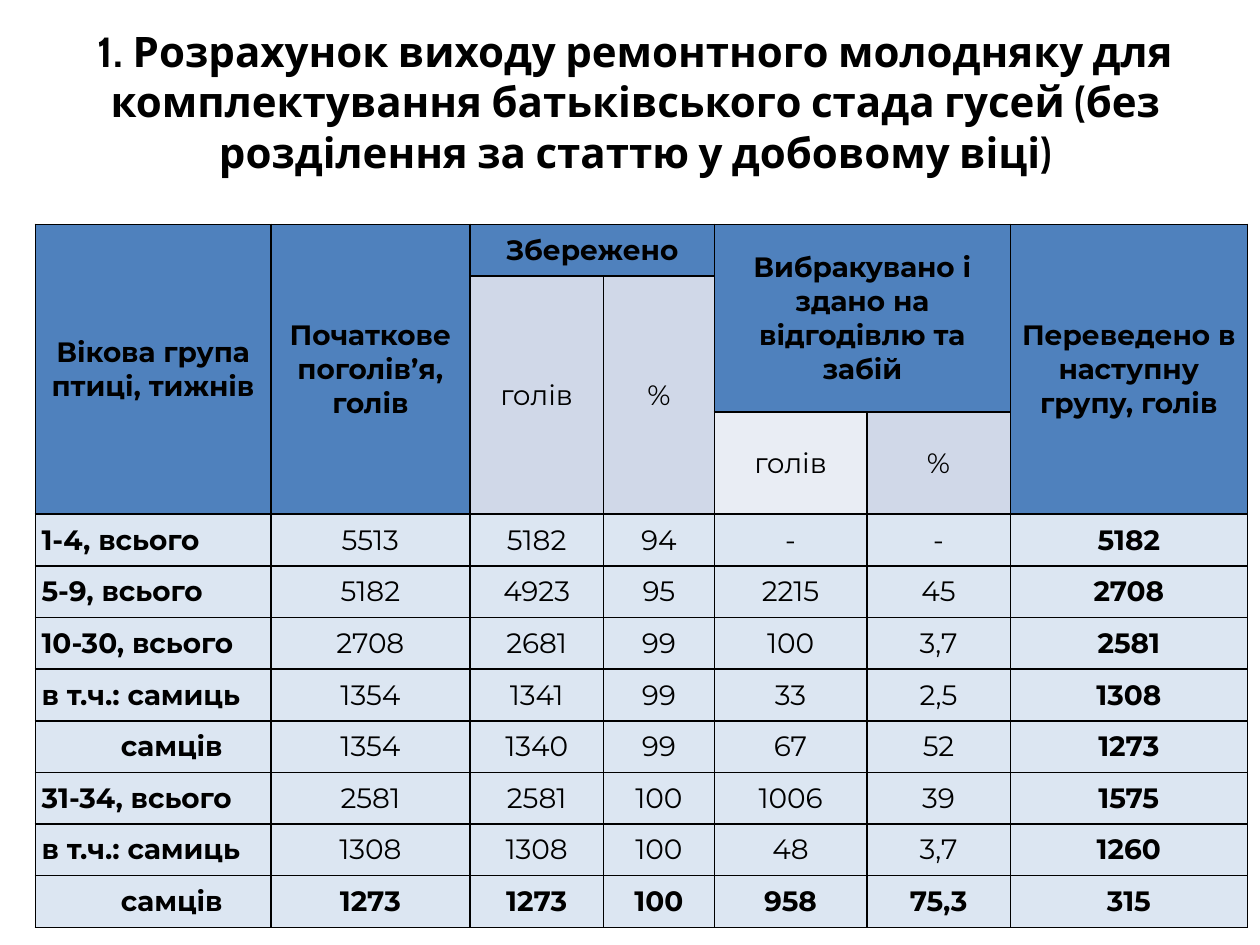
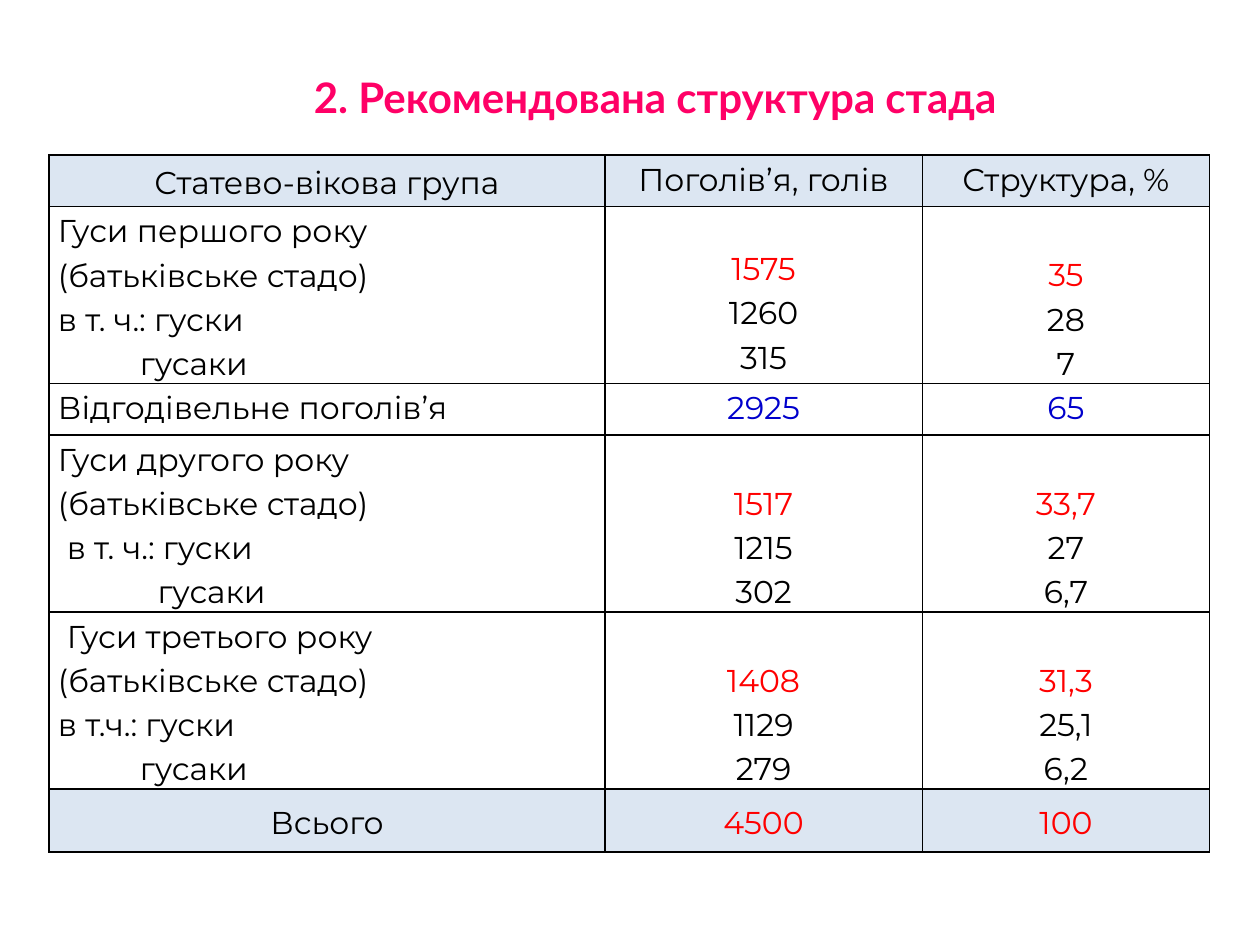
from dataclasses import dataclass
from lxml import etree
from pptx import Presentation
from pptx.dml.color import RGBColor
from pptx.enum import text
from pptx.oxml import ns
from pptx.util import Inches, Pt

MID, TOP = text.MSO_ANCHOR.MIDDLE, text.MSO_ANCHOR.TOP
LEFT, CENTER = text.PP_ALIGN.LEFT, text.PP_ALIGN.CENTER


@dataclass(frozen=True)
class Theme:
    black: str = "000000"
    pink: str = "FF0066"
    red: str = "FF0000"
    navy: str = "0000CC"
    blue: str = "4F81BD"
    band: str = "D0D8E8"
    pale: str = "E9EDF4"
    ice: str = "DCE6F2"
    body: str = "Montserrat"
    title: int = 24
    small: int = 16
    large: int = 18
    line: float = 1


T = Theme()

# Rearing table: row, column, rows spanned, columns spanned, text, fill
HEADS = [
    (0, 0, 3, 1, "Вікова група птиці, тижнів", T.blue),
    (0, 1, 3, 1, "Початкове поголів’я, голів", T.blue),
    (0, 2, 1, 2, "Збережено", T.blue),
    (0, 4, 2, 2, "Вибракувано і здано на відгодівлю та забій", T.blue),
    (0, 6, 3, 1, "Переведено в наступну групу, голів", T.blue),
    (1, 2, 2, 1, "голів", T.band),
    (1, 3, 2, 1, "%", T.band),
    (2, 4, 1, 1, "голів", T.pale),
    (2, 5, 1, 1, "%", T.band),
]
AGES = [
    ("1-4, всього", "5513", "5182", "94", "-", "-", "5182"),
    ("5-9, всього", "5182", "4923", "95", "2215", "45", "2708"),
    ("10-30, всього", "2708", "2681", "99", "100", "3,7", "2581"),
    ("в т.ч.: самиць", "1354", "1341", "99", "33", "2,5", "1308"),
    ("самців", "1354", "1340", "99", "67", "52", "1273"),
    ("31-34, всього", "2581", "2581", "100", "1006", "39", "1575"),
    ("в т.ч.: самиць", "1308", "1308", "100", "48", "3,7", "1260"),
    ("самців", "1273", "1273", "100", "958", "75,3", "315"),
]

# Flock table: labels, their indents, heads, shares, colour of the first value
FLOCK = [
    ("Гуси першого року\n(батьківське стадо)\nв т. ч.: гуски\nгусаки",
     (0, 0, 0, 0.65), "1575\n1260\n315", "35\n28\n7", T.red),
    ("Відгодівельне поголів’я", (0,), "2925", "65", T.navy),
    ("Гуси другого року\n(батьківське стадо)\nв т. ч.: гуски\nгусаки",
     (0, 0, 0.07, 0.79), "1517\n1215\n302", "33,7\n27\n6,7", T.red),
    ("Гуси третього року\n(батьківське стадо)\nв т.ч.: гуски\nгусаки",
     (0.07, 0, 0, 0.65), "1408\n1129\n279", "31,3\n25,1\n6,2", T.red),
]


def style(run, size, face, color, bold=False):
    font = run.font
    font.size, font.name, font.bold = Pt(size), face, bold
    font.color.rgb = RGBColor.from_string(color)


def indent(para, left=0, first=0):
    props = para._p.get_or_add_pPr()
    props.set("marL", str(Inches(left)))
    props.set("indent", str(Inches(first)))


def add_title(slide, box, words, face, color, first=0):
    """Fill the title placeholder and move it to the box."""
    shape = slide.shapes.title
    shape.left, shape.top, shape.width, shape.height = map(Inches, box)
    frame = shape.text_frame
    frame.text = words
    frame.auto_size = text.MSO_AUTO_SIZE.NONE
    frame.vertical_anchor = MID
    para = frame.paragraphs[0]
    para.alignment = CENTER
    indent(para, 0, first)
    style(para.runs[0], T.title, face, color, True)


def rule(cell):
    """Draw the four borders of a cell."""
    props = cell._tc.get_or_add_tcPr()
    for side in ("lnL", "lnR", "lnT", "lnB"):
        line = etree.SubElement(props, ns.qn("a:" + side), w=str(Pt(T.line)))
        fill = etree.SubElement(line, ns.qn("a:solidFill"))
        etree.SubElement(fill, ns.qn("a:srgbClr"), val=T.black)


def add_grid(slide, box, cols, rows):
    """Add a ruled table with no style bands."""
    grid = slide.shapes.add_table(len(rows), len(cols), *map(Inches, box)).table
    grid.first_row = grid.horz_banding = False
    for col, width in zip(grid.columns, cols):
        col.width = Inches(width)
    for row, height in zip(grid.rows, rows):
        row.height = Inches(height)
    for cell in grid.iter_cells():
        rule(cell)
    return grid


def put(cell, words, size, fill=None, align=CENTER, anchor=MID, pad=0.05,
        top=0, bold=False, color=T.black, lead=T.black, space=None, lefts=()):
    """Write a cell; lead colours its first line, lefts indents its lines."""
    cell.text_frame.text = words
    cell.vertical_anchor = anchor
    cell.margin_left = cell.margin_right = Inches(pad)
    cell.margin_top, cell.margin_bottom = Inches(top), 0
    if fill:
        cell.fill.solid()
        cell.fill.fore_color.rgb = RGBColor.from_string(fill)
    else:
        cell.fill.background()
    for i, para in enumerate(cell.text_frame.paragraphs):
        para.alignment = align
        if space:
            para.line_spacing = space
        if lefts:
            indent(para, lefts[i])
        for run in para.runs:
            style(run, size, T.body, color if i else lead, bold)


def add_ages(slide, box):
    """Table of young birds by age group."""
    grid = add_grid(slide, box, (1.87, 1.58, 1.06, 0.88, 1.21, 1.14, 1.88),
                    [0.41, 0.64] + [0.41] * 9)
    # Two-level heading
    for row, col, down, wide, words, fill in HEADS:
        cell = grid.cell(row, col)
        if down * wide > 1:
            cell.merge(grid.cell(row + down - 1, col + wide - 1))
        put(cell, words, T.small, fill, bold=row == 0)
    # Age groups
    last = len(AGES) - 1
    for r, values in enumerate(AGES):
        for c, words in enumerate(values):
            put(grid.cell(r + 3, c), words, T.small, T.ice,
                align=CENTER if c else LEFT, bold=c in (0, 6) or r == last,
                lefts=(0.63,) if words == "самців" else ())


def add_flock(slide, box):
    """Table of the flock by year of use."""
    grid = add_grid(slide, box, (4.41, 2.52, 2.28),
                    (0.41, 1.22, 0.41, 1.27, 1.33, 0.5))
    base = dict(size=T.large, pad=0.07, space=1.15)
    # Heading and total
    for c, words in enumerate(("Статево-вікова група", "Поголів’я, голів", "Структура, %")):
        put(grid.cell(0, c), words, fill=T.ice, anchor=TOP if c else MID, **base)
    for c, words in enumerate(("Всього", "4500", "100")):
        put(grid.cell(5, c), words, fill=T.ice, lead=T.red if c else T.black, **base)
    # Groups: values start level with the second label line
    for r, (label, lefts, heads, share, lead) in enumerate(FLOCK, 1):
        put(grid.cell(r, 0), label, align=LEFT, anchor=TOP, lefts=lefts, **base)
        for c, words in enumerate((heads, share), 1):
            drop = 0 if len(lefts) == 1 else 0.3 if (r, c) == (1, 1) else 0.35
            put(grid.cell(r, c), words, anchor=TOP, top=drop, lead=lead, **base)


def main():
    deck = Presentation()
    deck.slide_width, deck.slide_height = Inches(10), Inches(7.5)
    plain = deck.slide_layouts[5]

    young = deck.slides.add_slide(plain)
    add_title(young, (0.2, 0.13, 9.69, 1.34),
              "1. Розрахунок виходу ремонтного молодняку для комплектування "
              "батьківського стада гусей (без розділення за статтю у добовому віці)",
              "Cabin", T.black)
    add_ages(young, (0.28, 1.78, 9.61, 4.74))

    flock = deck.slides.add_slide(plain)
    add_title(flock, (0.2, 0.52, 9.61, 0.5), "2. Рекомендована структура стада",
              "Lato", T.pink, 0.39)
    add_flock(flock, (0.39, 1.23, 9.21, 5.45))

    deck.save("out.pptx")


if __name__ == "__main__":
    main()
